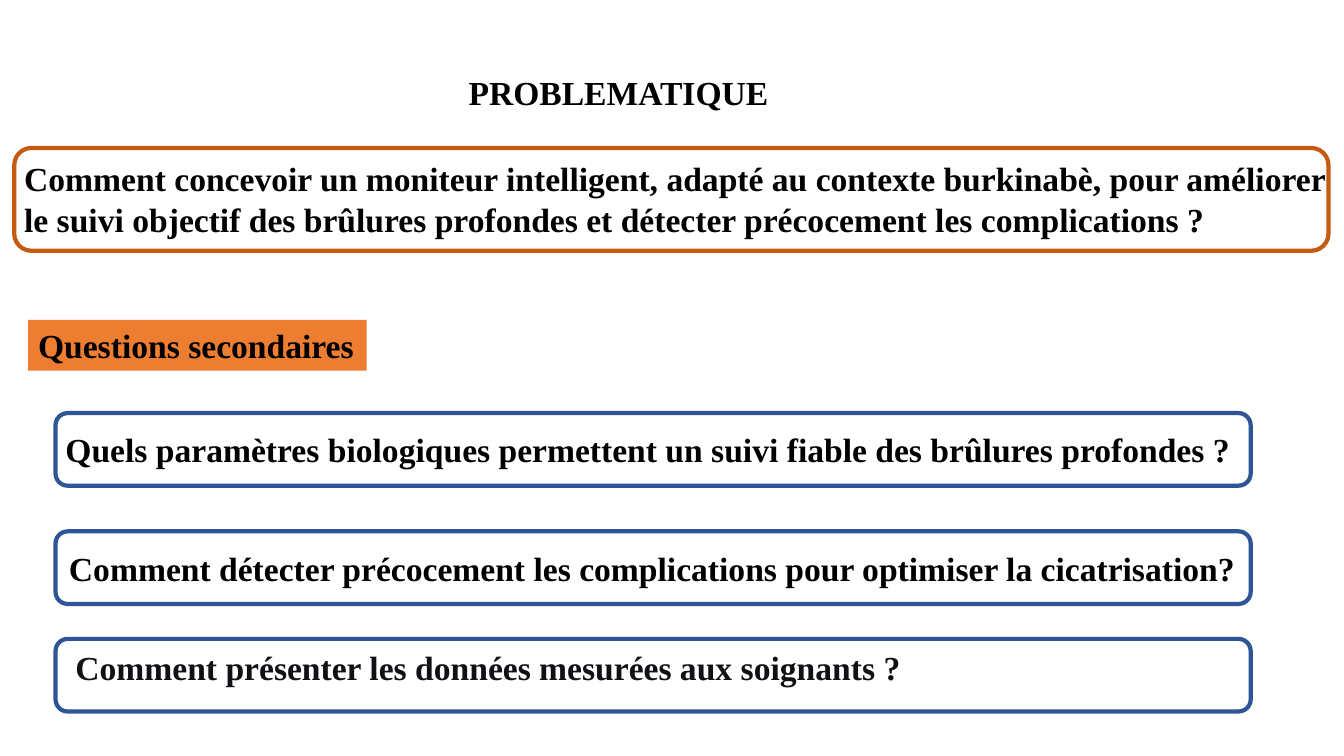
from dataclasses import dataclass

from pptx import Presentation
from pptx.dml.color import RGBColor
from pptx.enum.shapes import MSO_SHAPE
from pptx.enum.text import MSO_ANCHOR, PP_ALIGN
from pptx.shapes.autoshape import Shape
from pptx.slide import Slide
from pptx.util import Cm, Pt

COLORS = {
    "white": "FFFFFF",
    "black": "000000",
    "ink": "0F1115",
    "rust": "C55A11",
    "orange": "ED7D31",
    "blue": "2F5597",
}
FONT = {"name": "Times New Roman", "size": Pt(24), "bold": True}


@dataclass
class Frame:
    left: float
    top: float
    width: float
    height: float
    line: str = ""
    fill: str = "white"
    text: str = ""


@dataclass
class Label:
    text: str
    left: float
    top: float
    width: float
    height: float
    color: str = "black"
    pitch: float = 0


def tint(name: str) -> RGBColor:
    return RGBColor.from_string(COLORS[name])


def place(part: Frame | Label) -> tuple[Cm, Cm, Cm, Cm]:
    return Cm(part.left), Cm(part.top), Cm(part.width), Cm(part.height)


def write(shape: Shape, text: str, color: str = "black", pitch: float = 0) -> None:
    frame = shape.text_frame
    frame.word_wrap = True
    par = frame.paragraphs[0]
    par.alignment = PP_ALIGN.LEFT
    if pitch:
        par.line_spacing = Pt(pitch)
    run = par.add_run()
    run.text = text
    for key, value in FONT.items():
        setattr(run.font, key, value)
    run.font.color.rgb = tint(color)


def draw_frame(slide: Slide, part: Frame) -> None:
    kind = MSO_SHAPE.ROUNDED_RECTANGLE if part.line else MSO_SHAPE.RECTANGLE
    shape = slide.shapes.add_shape(kind, *place(part))
    shape.shadow.inherit = False
    shape.fill.solid()
    shape.fill.fore_color.rgb = tint(part.fill)
    if part.line:
        shape.line.color.rgb = tint(part.line)
        shape.line.width = Pt(3)
    else:
        shape.line.fill.background()
    if part.text:
        write(shape, part.text)
        shape.text_frame.vertical_anchor = MSO_ANCHOR.MIDDLE


def draw_label(slide: Slide, part: Label) -> None:
    box = slide.shapes.add_textbox(*place(part))
    write(box, part.text, part.color, part.pitch)


# Secondary questions share one column of equal frames
LEFT, WIDTH, HEIGHT = 1.4, 30.12, 1.83
DETECT = "Comment détecter précocement les complications pour optimiser la cicatrisation?"
ROWS = [(10.41, ""), (13.39, DETECT), (16.1, "")]

FRAMES = [
    Frame(0.36, 3.73, 33.12, 2.59, "rust"),
    Frame(0.71, 8.06, 8.53, 1.28, fill="orange", text="Questions secondaires"),
    *[Frame(LEFT, top, WIDTH, HEIGHT, "blue", text=text) for top, text in ROWS],
]

LABELS = [
    Label("PROBLEMATIQUE", 11.56, 1.68, 8.15, 1.28),
    Label(
        "Comment concevoir un moniteur intelligent, adapté au contexte burkinabè, "
        "pour améliorer le suivi objectif des brûlures profondes et détecter "
        "précocement les complications ?",
        0.36, 3.86, 33.43, 2.31,
    ),
    Label(
        "Quels paramètres biologiques permettent un suivi fiable des brûlures profondes ?",
        LEFT, 10.69, WIDTH, 1.28,
    ),
    Label(
        "Comment présenter les données mesurées aux soignants ?",
        1.65, 16.61, 21.64, 0.91, "ink", 16.5,
    ),
]


def main() -> None:
    deck = Presentation()
    deck.slide_width, deck.slide_height = Cm(33.87), Cm(19.05)
    slide = deck.slides.add_slide(deck.slide_layouts[6])

    # Frames first, loose text above them
    for frame in FRAMES:
        draw_frame(slide, frame)
    for label in LABELS:
        draw_label(slide, label)

    deck.save("out.pptx")


if __name__ == "__main__":
    main()
